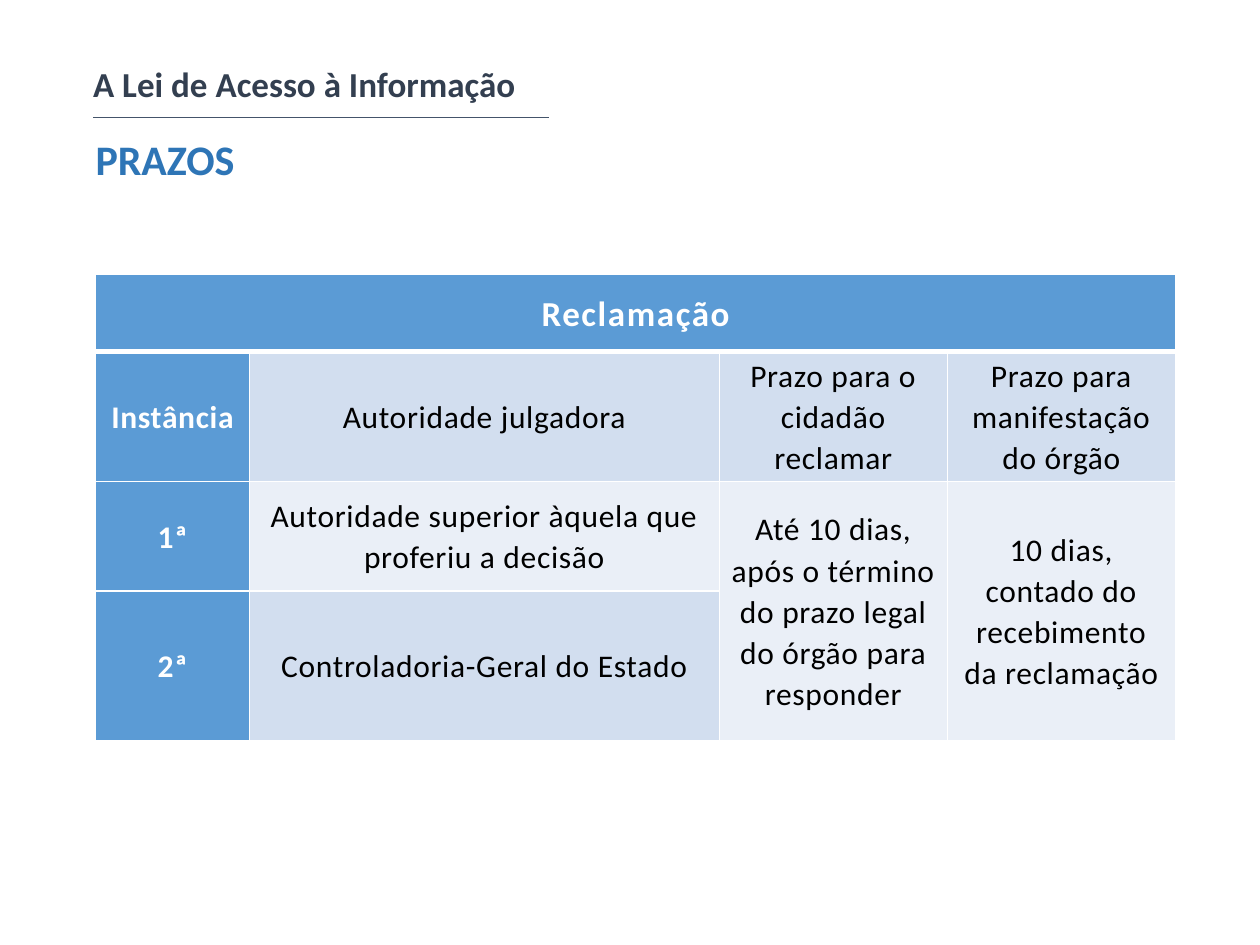
from lxml import etree
from pptx import Presentation
from pptx.dml.color import RGBColor
from pptx.enum.shapes import MSO_CONNECTOR
from pptx.enum.text import MSO_ANCHOR, MSO_AUTO_SIZE, PP_ALIGN
from pptx.oxml.ns import qn
from pptx.util import Inches, Pt

CENTER, MIDDLE = PP_ALIGN.CENTER, MSO_ANCHOR.MIDDLE
FIT_SHAPE, STRAIGHT = MSO_AUTO_SIZE.SHAPE_TO_FIT_TEXT, MSO_CONNECTOR.STRAIGHT
FONT = "Calibri"
WHITE = RGBColor(0xFF, 0xFF, 0xFF)
BLACK = RGBColor(0, 0, 0)
NAVY = RGBColor(0x33, 0x3F, 0x50)
SLATE = RGBColor(0x44, 0x54, 0x6A)
TITLE_BLUE = RGBColor(0x2E, 0x75, 0xB6)
HEADER_BLUE = RGBColor(0x5B, 0x9B, 0xD5)
BAND_DARK = RGBColor(0xD2, 0xDE, 0xEF)
BAND_LIGHT = RGBColor(0xEA, 0xEF, 0xF7)

HEADINGS = [  # text, (left, top, width, height), size, colour
    ("A Lei de Acesso à Informação", (0.64, 0.45, 3.59, 0.44), 20, NAVY),
    ("PRAZOS", (0.66, 1.01, 1.32, 0.5), 24, TITLE_BLUE),
]
RULE = (0.74, 0.93, 4.36, 0.93)
TABLE_LEFT, TABLE_TOP = 0.76, 2.18
COLUMN_WIDTHS = [1.22, 3.73, 1.81, 1.81]
ROW_HEIGHTS = [0.61, 1.03, 0.87, 1.19]
ROWS = [
    ["Reclamação", "", "", ""],
    ["Instância", "Autoridade julgadora", "Prazo para o cidadão reclamar",
     "Prazo para manifestação do órgão"],
    ["1ª", "Autoridade superior àquela que proferiu a decisão",
     "Até 10 dias, após o término do prazo legal do órgão para responder",
     "10 dias, contado do recebimento da reclamação"],
    ["2ª", "Controladoria-Geral do Estado", "", ""],
]
MERGES = [((0, 0), (0, 3)), ((2, 2), (3, 2)), ((2, 3), (3, 3))]


def set_attributes(target, values):
    for name, value in values.items():
        setattr(target, name, value)


def add_run(paragraph, text, size, color, bold):
    run = paragraph.add_run()
    run.text = text
    set_attributes(run.font, {"name": FONT, "size": Pt(size), "bold": bold})
    run.font.color.rgb = color
    return run


def add_heading(slide, text, box, size, color):
    shape = slide.shapes.add_textbox(*map(Inches, box))
    set_attributes(shape.text_frame, {"word_wrap": False, "auto_size": FIT_SHAPE})
    add_run(shape.text_frame.paragraphs[0], text, size, color, True)


def add_rule(slide):
    rule = slide.shapes.add_connector(STRAIGHT, *map(Inches, RULE))
    rule.line.color.rgb = SLATE
    rule.line.width = Pt(0.5)
    etree.SubElement(rule._element.spPr, qn("a:effectLst"))


def set_borders(cell, widths):
    """Draw white borders; widths are points keyed by side, in L, R, T, B order."""
    properties = cell._tc.get_or_add_tcPr()
    for index, (side, width) in enumerate(widths.items()):
        line = etree.Element(qn(f"a:ln{side}"), w=str(Pt(width)))
        fill = etree.SubElement(line, qn("a:solidFill"))
        etree.SubElement(fill, qn("a:srgbClr"), val=str(WHITE))
        properties.insert(index, line)


def format_cell(cell, row, column, text):
    title = row == 0
    header = title or column == 0
    cell.fill.solid()
    cell.fill.fore_color.rgb = (
        HEADER_BLUE if header else BAND_LIGHT if row == 2 else BAND_DARK)
    set_borders(cell, {"L": 1, "R": 1, "T": 3 if row == 1 else 1, "B": 3 if title else 1})
    set_attributes(cell, {
        "vertical_anchor": MIDDLE,
        "margin_left": Inches(0.07), "margin_right": Inches(0.07),
        "margin_top": 0, "margin_bottom": 0,
    })
    if text:
        paragraph = cell.text_frame.paragraphs[0]
        set_attributes(paragraph, {"alignment": CENTER, "line_spacing": 1.07})
        run = add_run(paragraph, text, 20 if title else 18,
                      WHITE if header else BLACK, header)
        run.font._element.set("spc", "90" if title else "40")


def add_deadline_table(slide):
    frame = slide.shapes.add_table(
        len(ROWS), len(COLUMN_WIDTHS), Inches(TABLE_LEFT), Inches(TABLE_TOP),
        Inches(sum(COLUMN_WIDTHS)), Inches(sum(ROW_HEIGHTS)))
    table = frame.table
    for column, width in zip(table.columns, COLUMN_WIDTHS):
        column.width = Inches(width)
    for row, height in zip(table.rows, ROW_HEIGHTS):
        row.height = Inches(height)
    for first, last in MERGES:
        table.cell(*first).merge(table.cell(*last))
    for row, texts in enumerate(ROWS):
        for column, text in enumerate(texts):
            format_cell(table.cell(row, column), row, column, text)


def main():
    presentation = Presentation()
    presentation.slide_width = Inches(10)
    presentation.slide_height = Inches(7.5)
    slide = presentation.slides.add_slide(presentation.slide_layouts[6])
    add_deadline_table(slide)
    add_rule(slide)
    for heading in HEADINGS:
        add_heading(slide, *heading)
    presentation.save("out.pptx")


if __name__ == "__main__":
    main()
